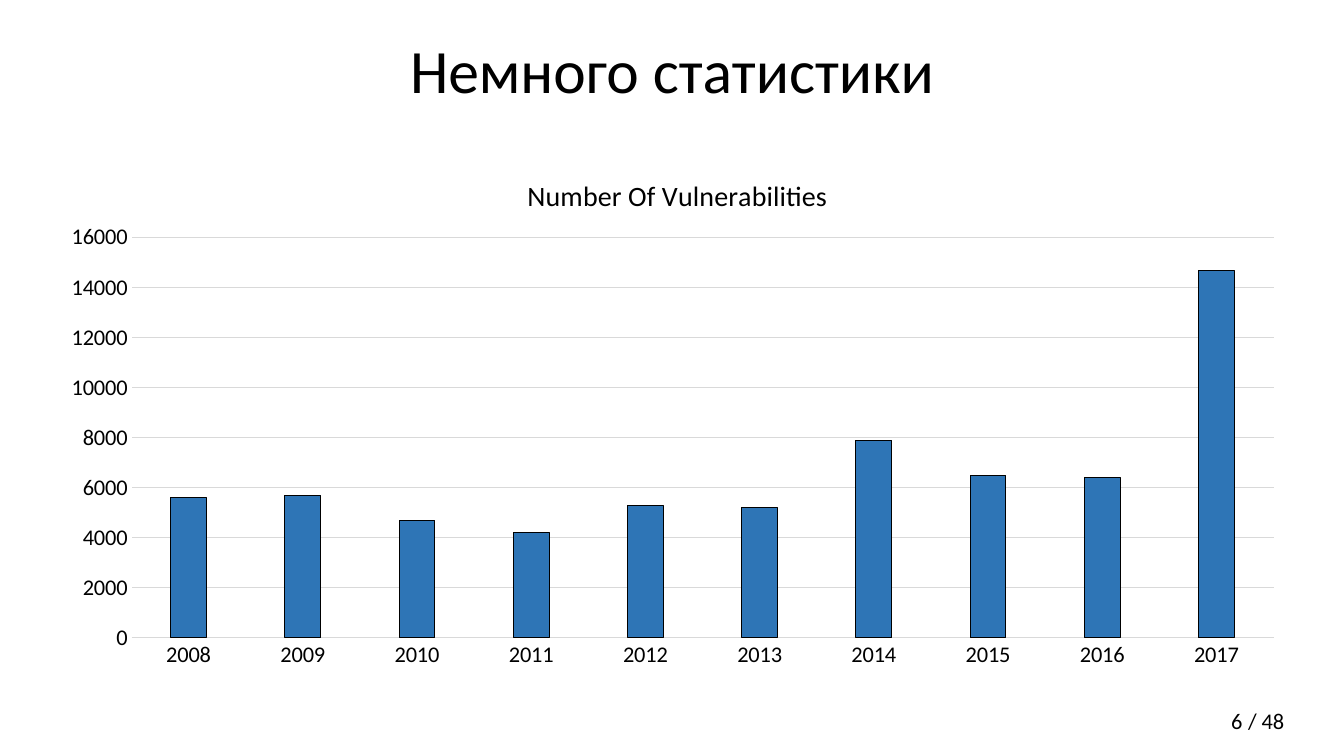
from lxml import etree
from pptx import Presentation
from pptx.chart.data import CategoryChartData as ChartData
from pptx.dml.color import RGBColor
from pptx.enum.chart import XL_CHART_TYPE as ChartType, XL_TICK_MARK as Tick
from pptx.enum.text import MSO_ANCHOR as Anchor, PP_ALIGN as Align
from pptx.oxml import parse_xml
from pptx.oxml.ns import nsdecls, qn
from pptx.util import Inches, Pt

BLACK = RGBColor(0x00, 0x00, 0x00)
GRID_GREY = RGBColor(0xD9, 0xD9, 0xD9)
BAR_BLUE = RGBColor(0x2E, 0x75, 0xB6)

YEARS = [str(year) for year in range(2008, 2018)]
VULNERABILITIES = [5600, 5700, 4700, 4200, 5300, 5200, 7900, 6500, 6400, 14700]


class StatisticsSlide:
    """Style and current slide; lengths are columns and rows of inch cells."""

    font_name = "Calibri"
    cell = Inches(1)

    def __init__(self, deck):
        self.page = deck.slides.add_slide(deck.slide_layouts[5])

    def area(self, *cells):
        return [int(count * self.cell) for count in cells]

    def style(self, font, size):
        font.name = self.font_name
        font.size = Pt(size)
        font.color.rgb = BLACK

    def add_text(self, box, text, size, align):
        para = box.text_frame.paragraphs[0]
        para.alignment = align
        span = para.add_run()
        span.text = text
        self.style(span.font, size)
        return para

    def title(self, text, *cells):
        box = self.page.shapes.title
        box.left, box.top, box.width, box.height = self.area(*cells)
        box.text_frame.vertical_anchor = Anchor.MIDDLE
        self.add_text(box, text, 44, Align.CENTER).line_spacing = 0.9

    def label(self, text, align, anchor, wrap, *cells):
        box = self.page.shapes.add_textbox(*self.area(*cells))
        box.text_frame.word_wrap = wrap
        box.text_frame.vertical_anchor = anchor
        self.add_text(box, text, 16, align)

    def place(self, part, **shares):
        """Fix a chart part at shares of the chart's size."""
        for old in part.findall(qn("c:layout")):
            part.remove(old)
        layout = parse_xml(f"<c:layout {nsdecls('c')}><c:manualLayout/></c:layout>")
        settings = {"xMode": "edge", "yMode": "edge", **shares}
        if "w" in shares:
            settings = {"layoutTarget": "inner", **settings}
        for name, value in settings.items():
            etree.SubElement(layout[0], qn(f"c:{name}")).set("val", str(value))
        return layout

    def column_chart(self, heading, categories, values, *cells):
        data = ChartData()
        data.categories = categories
        data.add_series("Series 1", values)
        chart = self.page.shapes.add_chart(
            ChartType.COLUMN_CLUSTERED, *self.area(*cells), data).chart
        self.style(chart.font, 10)
        chart.has_legend = False

        # Heading
        chart.has_title = True
        span = chart.chart_title.text_frame.paragraphs[0].add_run()
        span.text = heading
        self.style(span.font, 20)
        span.font.bold = False
        title = chart.chart_title._element
        layout = self.place(title, x=0.38, y=0.045)
        title.find(qn("c:tx")).addnext(layout)

        # Plot and bars
        plot = chart.plots[0]
        plot.gap_width = 219
        plot.vary_by_categories = False
        area = chart._chartSpace.chart.plotArea
        area.insert(0, self.place(area, x=0.068, y=0.171, w=0.912, h=0.748))
        bars = plot.series[0].format
        bars.fill.solid()
        bars.fill.fore_color.rgb = BAR_BLUE
        bars.line.color.rgb = BLACK
        bars.line.width = Pt(0.75)

        # Axes
        for axis in (chart.category_axis, chart.value_axis):
            axis.major_tick_mark = axis.minor_tick_mark = Tick.NONE
            self.style(axis.tick_labels.font, 16)
        scale = chart.value_axis
        scale.minimum_scale, scale.maximum_scale, scale.major_unit = 0, 16000, 2000
        scale.format.line.fill.background()
        for line in (chart.category_axis.format.line, scale.major_gridlines.format.line):
            line.color.rgb = GRID_GREY
            line.width = Pt(0.75)


def main():
    deck = Presentation()
    deck.slide_width, deck.slide_height = Inches(13.33), Inches(7.5)
    slide = StatisticsSlide(deck)

    # Title and chart
    slide.title("Немного статистики", 0.92, 0, 11.5, 1.45)
    slide.column_chart("Number Of Vulnerabilities", YEARS, VULNERABILITIES,
                       0.46, 1.45, 12.42, 5.31)

    # Page number and total
    slide.label("6", Align.RIGHT, Anchor.MIDDLE, True, 9.42, 6.95, 3, 0.4)
    slide.label("/ 48", Align.LEFT, Anchor.TOP, False, 12.28, 6.97, 0.57, 0.37)

    deck.save("out.pptx")


if __name__ == "__main__":
    main()
